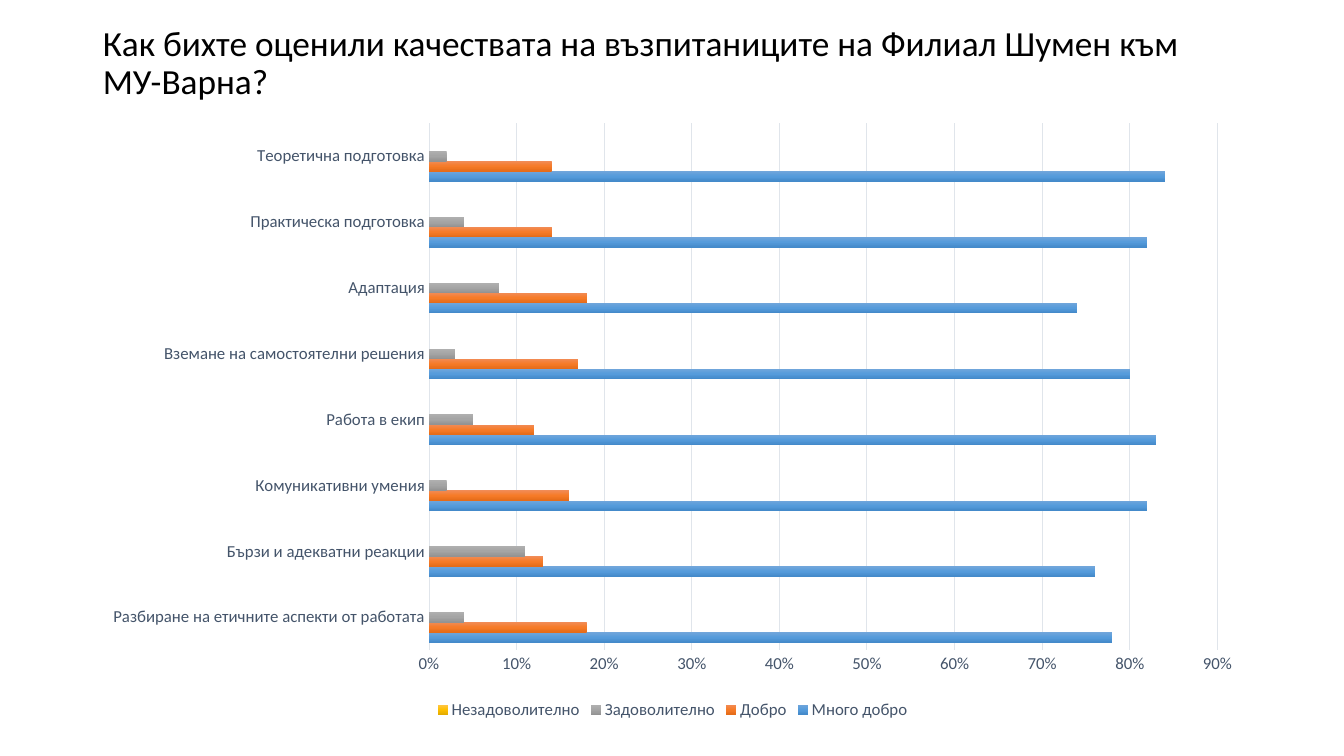
from lxml import etree
from pptx import Presentation
from pptx.chart.data import CategoryChartData
from pptx.dml.color import RGBColor
from pptx.enum.chart import XL_CHART_TYPE as ChartType
from pptx.enum.chart import XL_LEGEND_POSITION as LegendPosition
from pptx.enum.chart import XL_TICK_MARK as TickMark
from pptx.enum.text import MSO_ANCHOR as Anchor
from pptx.enum.text import MSO_AUTO_SIZE as AutoSize
from pptx.enum.text import PP_ALIGN as Align
from pptx.oxml import parse_xml
from pptx.oxml.ns import nsdecls, qn
from pptx.util import Inches, Pt

TITLE = "Как бихте оценили качествата на възпитаниците на Филиал Шумен към МУ-Варна?"

QUALITIES = [
    "Разбиране на етичните аспекти от работата",
    "Бързи и адекватни реакции",
    "Комуникативни умения",
    "Работа в екип",
    "Вземане на самостоятелни решения",
    "Адаптация",
    "Практическа подготовка",
    "Теоретична подготовка",
]
NO_ANSWERS = [None] * len(QUALITIES)

# Rating name, shares, gradient from top to bottom
RATINGS = [
    ("Много добро", [0.78, 0.76, 0.82, 0.83, 0.8, 0.74, 0.82, 0.84],
     ["71A6DB", "559BDB", "448ACA"]),
    ("Добро", [0.18, 0.13, 0.16, 0.12, 0.17, 0.18, 0.14, 0.14],
     ["F18C57", "F67B28", "E56C19"]),
    ("Задоволително", [0.04, 0.11, 0.02, 0.05, 0.03, 0.08, 0.04, 0.02],
     ["AFAFAF", "A5A5A5", "939393"]),
    ("Незадоволително", NO_ANSWERS, ["FFC64B", "FFC000", "E3AB00"]),
    ("", NO_ANSWERS, ["6183CB", "3E70CA", "3062BB"]),
]


def color(value):
    return RGBColor.from_string(value)


def apply(target, **values):
    for name, value in values.items():
        setattr(target, name, value)


class SlideBuilder:
    font = "Calibri"
    title_color = "000000"
    label_color = "44546A"
    line_color = "E0E5EB"

    def __init__(self, deck):
        self.page = deck.slides.add_slide(deck.slide_layouts[5])

    def style_font(self, font, size, value):
        apply(font, name=self.font, size=Pt(size), bold=False)
        font.color.rgb = color(value)

    def style_line(self, line):
        line.color.rgb = color(self.line_color)
        line.width = Pt(0.75)

    def title(self, text, left, top, width, height):
        box = self.page.shapes.title
        apply(box, left=Inches(left), top=Inches(top),
              width=Inches(width), height=Inches(height))
        frame = box.text_frame
        apply(frame, word_wrap=True, auto_size=AutoSize.NONE,
              vertical_anchor=Anchor.MIDDLE)
        para = frame.paragraphs[0]
        apply(para, alignment=Align.LEFT, line_spacing=0.9)
        span = para.add_run()
        span.text = text
        self.style_font(span.font, 25.2, self.title_color)

    def bar_chart(self, categories, ratings, left, top, width, height):
        data = CategoryChartData(number_format="0%")
        data.categories = categories
        for name, shares, _ in ratings:
            data.add_series(name, shares)
        chart = self.page.shapes.add_chart(
            ChartType.BAR_CLUSTERED, Inches(left), Inches(top),
            Inches(width), Inches(height), data).chart
        chart.has_title = False
        self.style_font(chart.font, 10, self.title_color)

        # Bars
        plot = chart.plots[0]
        apply(plot, gap_width=150, overlap=0, vary_by_categories=False)
        for series, (_, _, shades) in zip(plot.series, ratings):
            self.gradient(series, shades)

        self.axes(chart)
        self.legend(chart)
        self.plot_area(chart, x=0.29, y=0.02, w=0.68, h=0.86)

    def gradient(self, series, shades):
        series.invert_if_negative = False
        stops = "".join(
            f'<a:gs pos="{place * 50000}"><a:srgbClr val="{shade}"/></a:gs>'
            for place, shade in enumerate(shades))
        series.format.fill.background()
        properties = series.format.fill._xPr
        properties.replace(properties.find(qn("a:noFill")), parse_xml(
            f'<a:gradFill {nsdecls("a")} rotWithShape="1"><a:gsLst>{stops}</a:gsLst>'
            '<a:lin ang="5400000" scaled="0"/></a:gradFill>'))

    def axes(self, chart):
        for axis in (chart.category_axis, chart.value_axis):
            apply(axis, major_tick_mark=TickMark.NONE, minor_tick_mark=TickMark.NONE)
            self.style_font(axis.tick_labels.font, 12, self.label_color)
        self.style_line(chart.category_axis.format.line)
        values = chart.value_axis
        apply(values, minimum_scale=0, maximum_scale=0.9, major_unit=0.1,
              has_major_gridlines=True)
        self.style_line(values.major_gridlines.format.line)
        values.format.line.fill.background()
        apply(values.tick_labels, number_format="0%", number_format_is_linked=False)

    def legend(self, chart):
        chart.has_legend = True
        legend = chart.legend
        apply(legend, position=LegendPosition.BOTTOM, include_in_layout=False)
        self.style_font(legend.font, 12, self.label_color)
        # Hide the entry of the unnamed series; a bar legend counts from the last one
        entry = parse_xml(f'<c:legendEntry {nsdecls("c")}><c:idx val="0"/>'
                          '<c:delete val="1"/></c:legendEntry>')
        legend._element.find(qn("c:legendPos")).addnext(entry)

    def plot_area(self, chart, **fractions):
        area = chart._chartSpace.chart.plotArea
        layout = area.find(qn("c:layout"))
        if layout is None:
            layout = parse_xml(f'<c:layout {nsdecls("c")}/>')
            area.insert(0, layout)
        manual = etree.SubElement(layout, qn("c:manualLayout"))
        settings = {"layoutTarget": "inner", "xMode": "edge", "yMode": "edge", **fractions}
        for name, value in settings.items():
            etree.SubElement(manual, qn(f"c:{name}")).set("val", str(value))


def main():
    deck = Presentation()
    apply(deck, slide_width=Inches(13.33), slide_height=Inches(7.5))
    slide = SlideBuilder(deck)
    slide.title(TITLE, 0.92, 0.17, 11.5, 0.93)
    slide.bar_chart(QUALITIES, RATINGS, 0.92, 1.1, 11.5, 6.08)
    deck.save("out.pptx")


if __name__ == "__main__":
    main()
